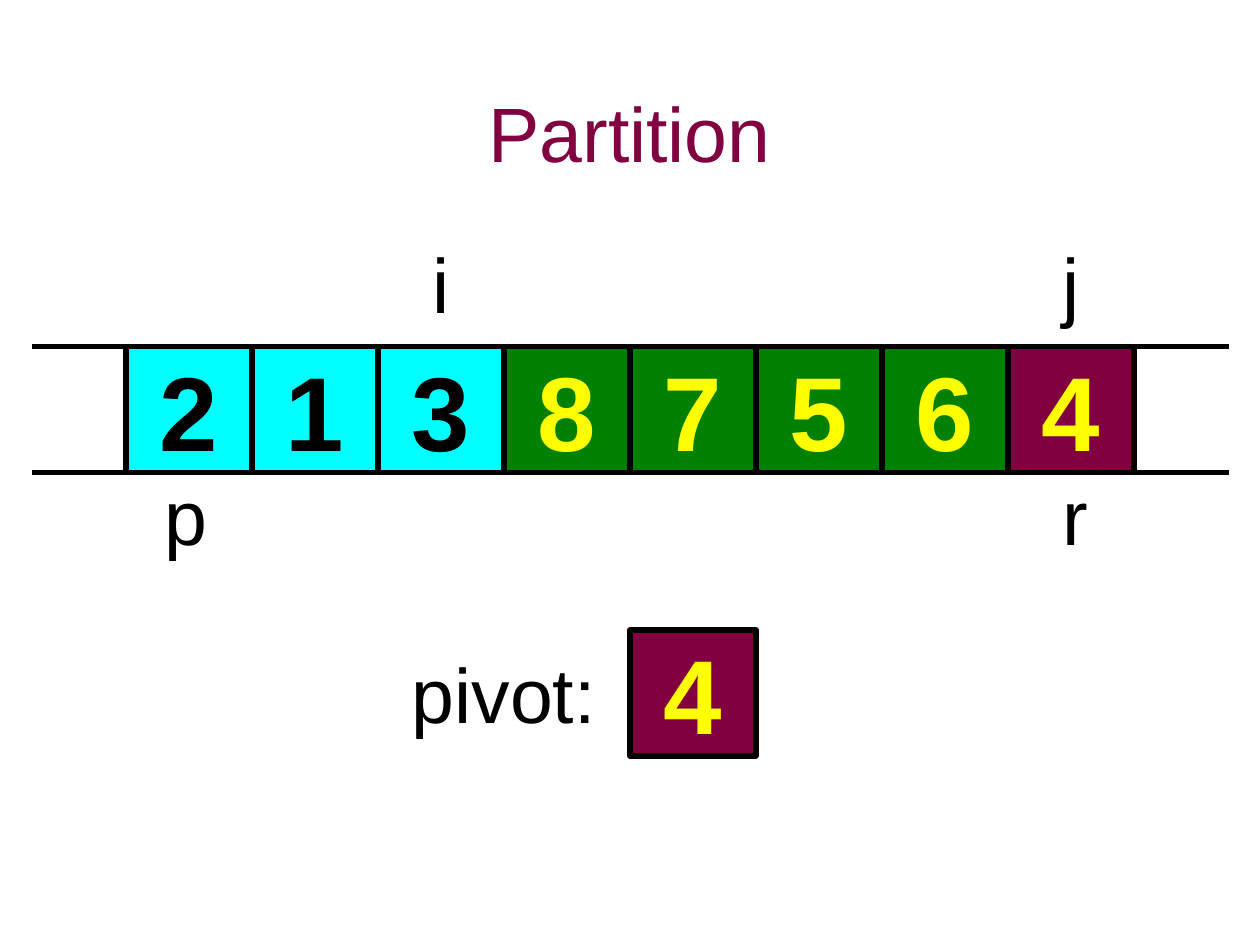
import dataclasses

import lxml.etree
import pptx
import pptx.dml.color
import pptx.enum.shapes
import pptx.enum.text
import pptx.oxml.ns
import pptx.presentation
import pptx.slide
import pptx.text.text
import pptx.util

Cm = pptx.util.Cm
RGBColor = pptx.dml.color.RGBColor


@dataclasses.dataclass(frozen=True)
class Theme:
    font: str = "Arial"
    label_size: int = 44
    digit_size: int = 60
    line_width: int = 3
    black: RGBColor = RGBColor(0x00, 0x00, 0x00)
    yellow: RGBColor = RGBColor(0xFF, 0xFF, 0x00)
    cyan: RGBColor = RGBColor(0x00, 0xFF, 0xFF)
    green: RGBColor = RGBColor(0x00, 0x80, 0x00)
    maroon: RGBColor = RGBColor(0x80, 0x00, 0x40)


@dataclasses.dataclass(frozen=True)
class Cell:
    digit: str
    fill: RGBColor
    color: RGBColor


@dataclasses.dataclass(frozen=True)
class Label:
    text: str
    left: float
    top: float
    width: float


THEME = Theme()
CELL_SIZE = 2.54
ARRAY_LEFT = CELL_SIZE
ARRAY_TOP = 2.75 * CELL_SIZE
RAIL_LENGTH = 0.75 * CELL_SIZE
LABEL_HEIGHT = 2.11
INDEX_TOP, BOUND_TOP, PIVOT_LABEL_TOP = 4.65, 9.32, 12.9

PIVOT = Cell("4", THEME.maroon, THEME.yellow)
ARRAY = (
    [Cell(digit, THEME.cyan, THEME.black) for digit in "213"]
    + [Cell(digit, THEME.green, THEME.yellow) for digit in "8756"]
    + [PIVOT]
)
LABELS = [
    Label("p", 3.07, BOUND_TOP, 1.37),
    Label("r", 21.16, BOUND_TOP, 1.02),
    Label("j", 21.16, INDEX_TOP, 0.86),
    Label("i", 8.46, INDEX_TOP, 0.86),
    Label("pivot:", 8.05, PIVOT_LABEL_TOP, 4.65),
]


def write_text(
    text_frame: pptx.text.text.TextFrame,
    text: str,
    size: int,
    color: RGBColor,
    bold: bool = False,
    centered: bool = True,
) -> None:
    text_frame.text = text
    paragraph = text_frame.paragraphs[0]
    alignment = pptx.enum.text.PP_ALIGN
    paragraph.alignment = alignment.CENTER if centered else alignment.LEFT
    font = paragraph.runs[0].font
    font.name = THEME.font
    font.size = pptx.util.Pt(size)
    font.bold = bold
    font.color.rgb = color


def draw_title(slide: pptx.slide.Slide, text: str) -> None:
    title = slide.shapes.title
    title.left, title.top = Cm(1.9), Cm(1.07)
    title.width, title.height = Cm(21.59), Cm(3.18)
    title.text_frame.auto_size = pptx.enum.text.MSO_AUTO_SIZE.NONE
    title.text_frame.vertical_anchor = pptx.enum.text.MSO_ANCHOR.MIDDLE
    write_text(title.text_frame, text, THEME.label_size, THEME.maroon)


def draw_cell(slide: pptx.slide.Slide, cell: Cell, left: float, top: float) -> None:
    shape = slide.shapes.add_shape(
        pptx.enum.shapes.MSO_SHAPE.RECTANGLE,
        Cm(left), Cm(top), Cm(CELL_SIZE), Cm(CELL_SIZE),
    )
    shape.shadow.inherit = False
    shape.fill.solid()
    shape.fill.fore_color.rgb = cell.fill
    shape.line.color.rgb = THEME.black
    shape.line.width = pptx.util.Pt(THEME.line_width)
    shape.text_frame.word_wrap = False
    shape.text_frame.vertical_anchor = pptx.enum.text.MSO_ANCHOR.MIDDLE
    write_text(shape.text_frame, cell.digit, THEME.digit_size, cell.color, bold=True)


def draw_label(slide: pptx.slide.Slide, label: Label) -> None:
    box = slide.shapes.add_textbox(
        Cm(label.left), Cm(label.top), Cm(label.width), Cm(LABEL_HEIGHT)
    )
    box.text_frame.word_wrap = False
    box.text_frame.auto_size = pptx.enum.text.MSO_AUTO_SIZE.SHAPE_TO_FIT_TEXT
    write_text(
        box.text_frame, label.text, THEME.label_size, THEME.black, centered=False
    )


def draw_rail(slide: pptx.slide.Slide, right: float, top: float) -> None:
    connector = slide.shapes.add_connector(
        pptx.enum.shapes.MSO_CONNECTOR.STRAIGHT,
        Cm(right), Cm(top), Cm(right - RAIL_LENGTH), Cm(top),
    )
    connector.line.color.rgb = THEME.black
    connector.line.width = pptx.util.Pt(THEME.line_width)
    lxml.etree.SubElement(
        connector._element.spPr, pptx.oxml.ns.qn("a:effectLst")
    )


def build_presentation() -> pptx.presentation.Presentation:
    presentation = pptx.Presentation()
    presentation.slide_width = Cm(25.4)
    presentation.slide_height = Cm(19.05)
    slide = presentation.slides.add_slide(
        presentation.slide_layouts.get_by_name("Title Only")
    )
    draw_title(slide, "Partition")
    for index, cell in enumerate(ARRAY):
        draw_cell(slide, cell, ARRAY_LEFT + index * CELL_SIZE, ARRAY_TOP)
    for label in LABELS:
        draw_label(slide, label)
    draw_cell(slide, PIVOT, 5 * CELL_SIZE, 5 * CELL_SIZE)
    array_right = ARRAY_LEFT + len(ARRAY) * CELL_SIZE
    for right in (ARRAY_LEFT, array_right + RAIL_LENGTH):
        for top in (ARRAY_TOP, ARRAY_TOP + CELL_SIZE):
            draw_rail(slide, right, top)
    return presentation


if __name__ == "__main__":
    build_presentation().save("out.pptx")
